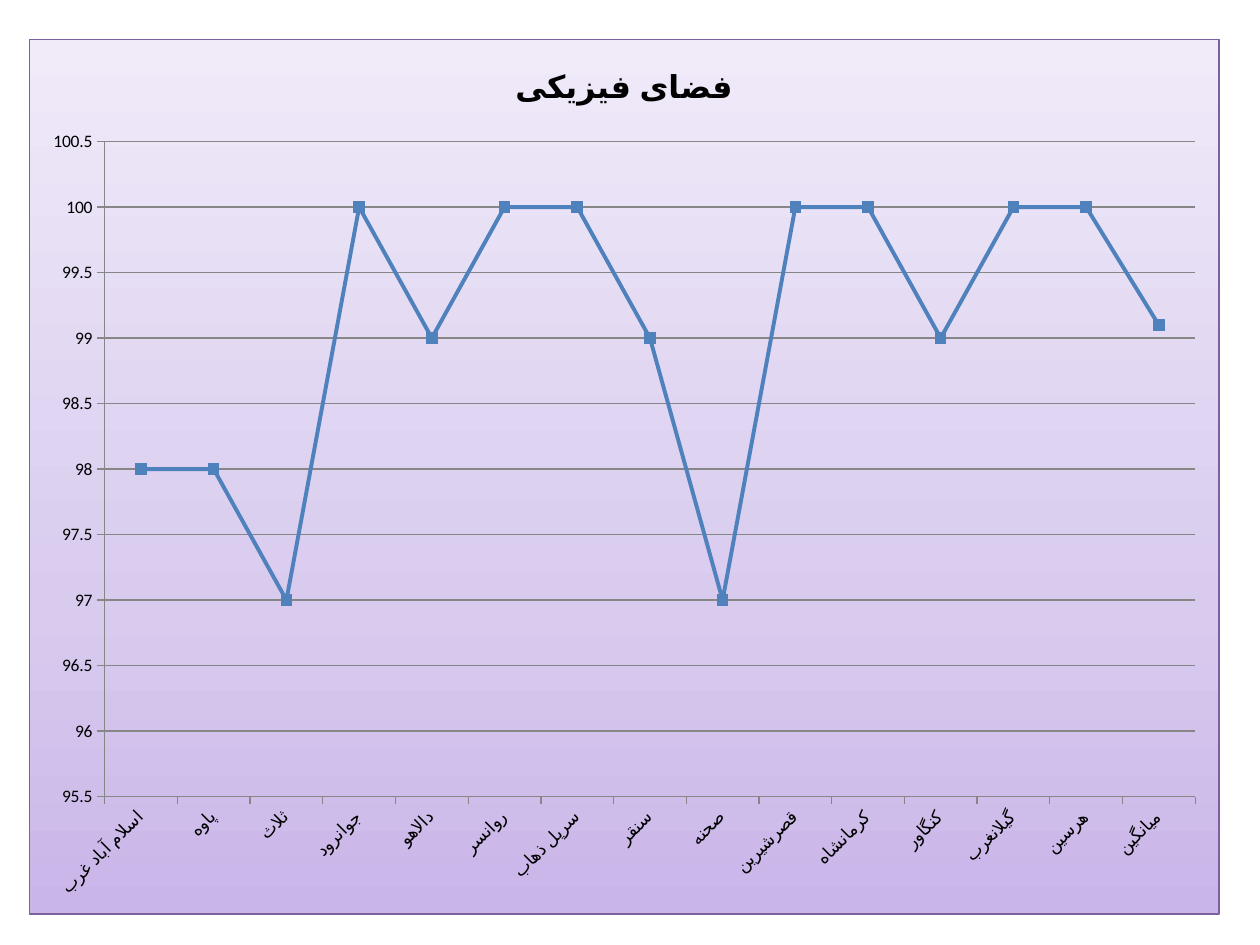
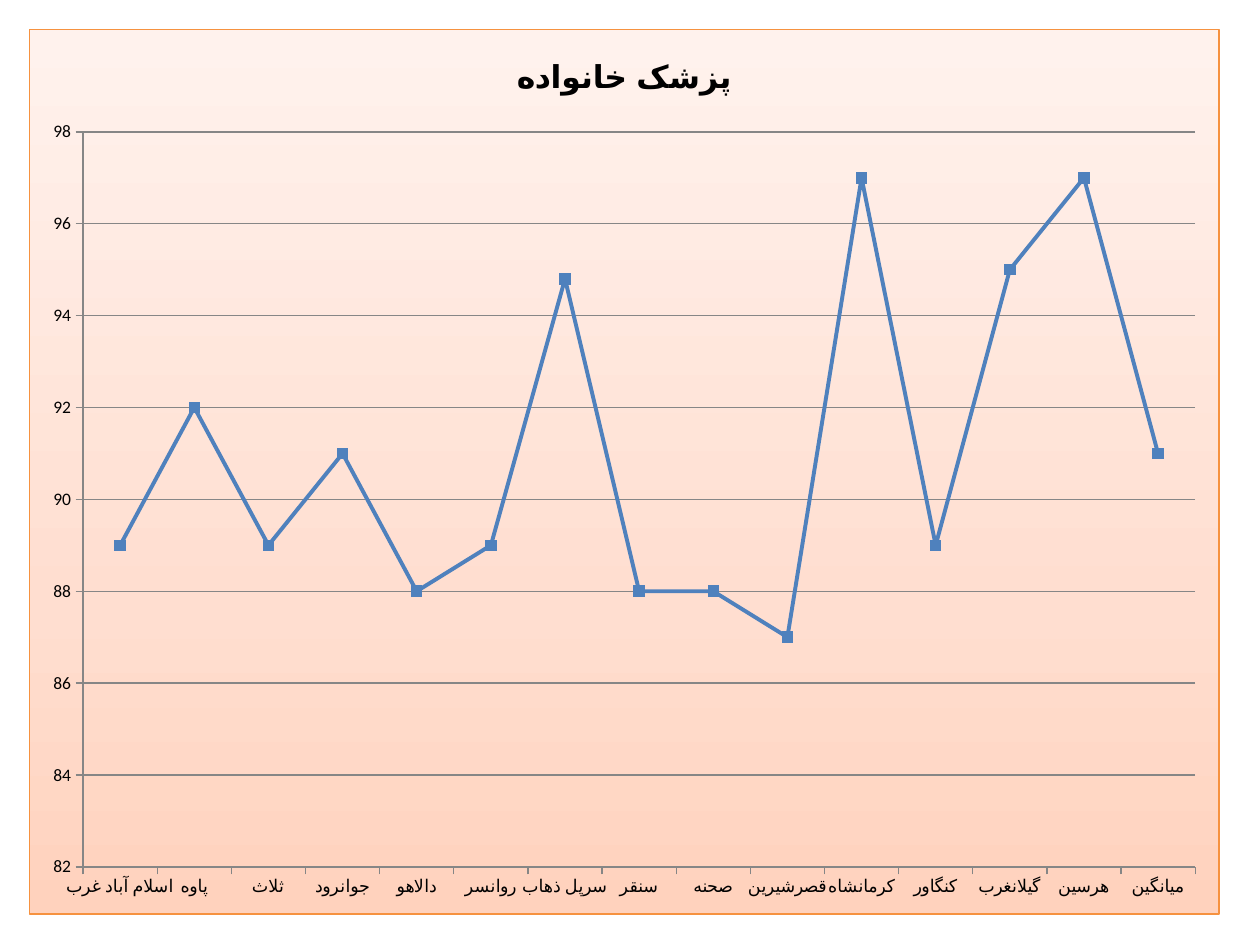
from lxml import etree
from pptx import Presentation
from pptx.chart.data import CategoryChartData
from pptx.dml.color import RGBColor
from pptx.enum.chart import XL_CHART_TYPE, XL_MARKER_STYLE, XL_TICK_MARK
from pptx.oxml import parse_xml
from pptx.util import Inches, Pt

LINE_MARKERS = XL_CHART_TYPE.LINE_MARKERS
SQUARE = XL_MARKER_STYLE.SQUARE
OUTSIDE = XL_TICK_MARK.OUTSIDE

FONT = "Calibri"
BLACK = "000000"
BLUE = "4F81BD"
GRAY = "868686"
C_NS = "http://schemas.openxmlformats.org/drawingml/2006/chart"
A_NS = "http://schemas.openxmlformats.org/drawingml/2006/main"

CITIES = ["اسلام آباد غرب", "پاوه", "ثلاث", "جوانرود", "دالاهو", "روانسر",
          "سرپل ذهاب", "سنقر", "صحنه", "قصرشیرین", "کرمانشاه", "کنگاور",
          "گیلانغرب", "هرسین", "میانگین"]

SLIDES = [
    {"title": "فضای فیزیکی", "top": 0.31, "height": 6.95,
     "scale": (95.5, 100.5, 0.5), "border": "7D60A0",
     "gradient": ["C9B5E8", "D8CBEE", "F0EAF9"],
     "values": [98, 98, 97, 100, 99, 100, 100, 99, 97, 100, 100, 99, 100, 100, 99.1]},
    {"title": "پزشک خانواده", "top": 0.23, "height": 7.03,
     "scale": (82, 98, 2), "border": "F69240",
     "gradient": ["FFD2BD", "FFDED0", "FFF2ED"],
     "values": [89, 92, 89, 91, 88, 89, 94.8, 88, 88, 87, 97, 89, 95, 97, 91]},
]


def rgb(value):
    return RGBColor.from_string(value)


def paint_chart_area(chart, colors, border):
    sp_pr = etree.Element(f"{{{C_NS}}}spPr", nsmap={"c": C_NS, "a": A_NS})
    stops = "".join(
        f'<a:gs pos="{pos * 1000}"><a:srgbClr val="{color}"/></a:gs>'
        for pos, color in zip((0, 35, 100), colors))
    sp_pr.append(parse_xml(
        f'<a:gradFill xmlns:a="{A_NS}" rotWithShape="1"><a:gsLst>{stops}</a:gsLst>'
        '<a:lin ang="16200000" scaled="1"/></a:gradFill>'))
    sp_pr.append(parse_xml(
        f'<a:ln xmlns:a="{A_NS}" w="{Pt(0.75)}"><a:solidFill>'
        f'<a:srgbClr val="{border}"/></a:solidFill></a:ln>'))
    chart._chartSpace.chart.addnext(sp_pr)


prs = Presentation()
prs.slide_width = Inches(10)
prs.slide_height = Inches(7.5)

for item in SLIDES:
    s = prs.slides.add_slide(prs.slide_layouts[6])
    data = CategoryChartData()
    data.categories = CITIES
    data.add_series(item["title"], item["values"])
    chart = s.shapes.add_chart(LINE_MARKERS, Inches(0.23), Inches(item["top"]),
                               Inches(9.45), Inches(item["height"]), data).chart
    chart.has_legend = False
    chart.font.name = FONT
    chart.font.size = Pt(10)
    chart.font.color.rgb = rgb(BLACK)
    paint_chart_area(chart, item["gradient"], item["border"])

    chart.has_title = True
    chart.chart_title.include_in_layout = False
    p = chart.chart_title.text_frame.paragraphs[0]
    r = p.add_run()
    r.text = item["title"]
    r.font.name = FONT
    r.font.size = Pt(18)
    r.font.bold = True
    r.font.color.rgb = rgb(BLACK)

    axis = chart.value_axis
    axis.minimum_scale, axis.maximum_scale, axis.major_unit = item["scale"]
    axis.has_major_gridlines = True
    axis.tick_labels.number_format = "General"
    axis.tick_labels.number_format_is_linked = False
    for line in (axis.major_gridlines.format.line, axis.format.line,
                 chart.category_axis.format.line):
        line.color.rgb = rgb(GRAY)
        line.width = Pt(0.75)
    for ax in (axis, chart.category_axis):
        ax.major_tick_mark = OUTSIDE

    plot = chart.plots[0]
    plot.vary_by_categories = False
    series = plot.series[0]
    series.smooth = False
    series.format.line.color.rgb = rgb(BLUE)
    series.format.line.width = Pt(2.25)
    series.marker.style = SQUARE
    series.marker.size = 6
    series.marker.format.fill.solid()
    series.marker.format.fill.fore_color.rgb = rgb(BLUE)
    series.marker.format.line.color.rgb = rgb(BLUE)

prs.save("out.pptx")
